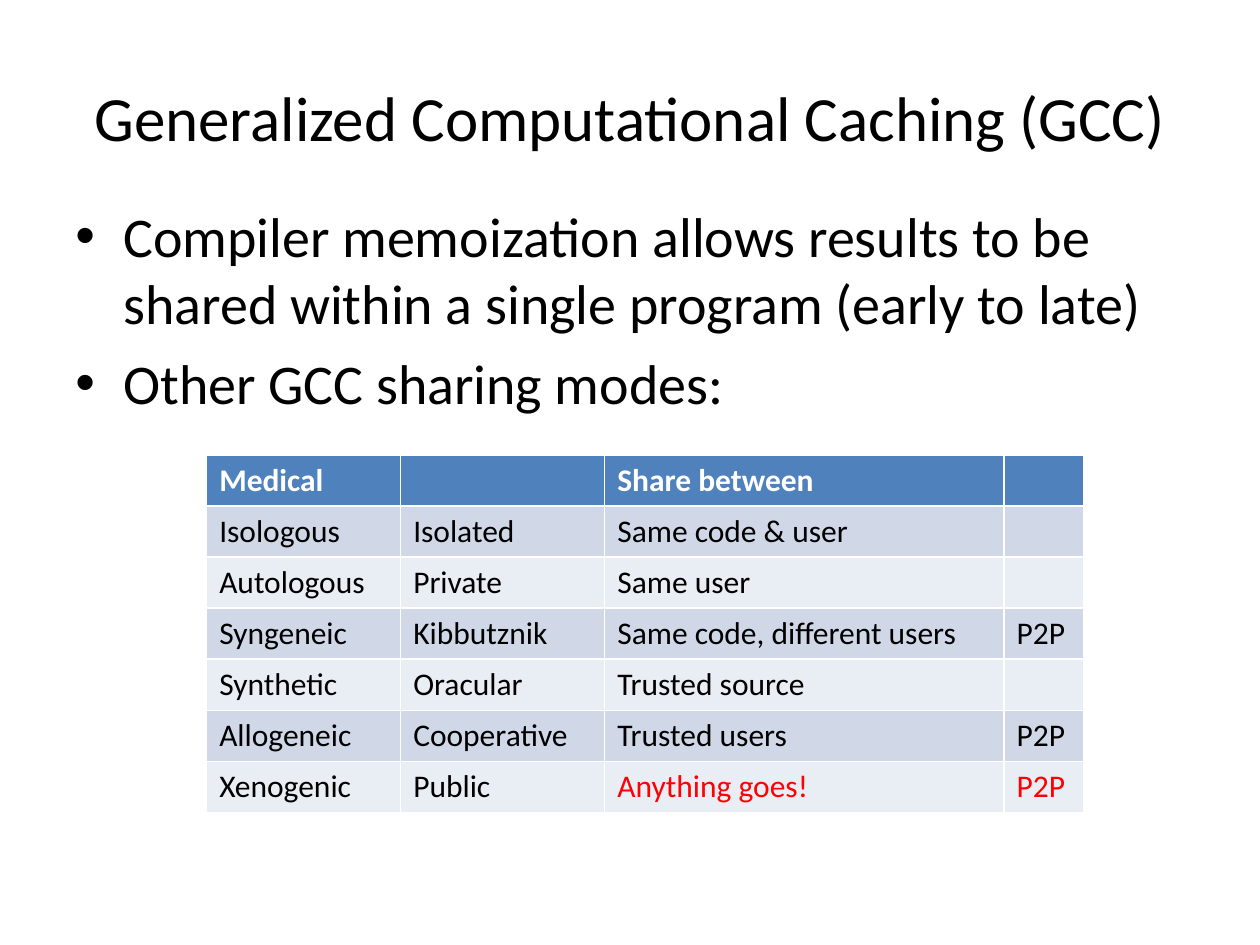
from dataclasses import dataclass

from lxml import etree
from pptx import Presentation
from pptx.dml.color import RGBColor
from pptx.enum.text import MSO_ANCHOR, PP_ALIGN
from pptx.oxml.ns import qn
from pptx.util import Inches, Pt

LEFT, CENTER = PP_ALIGN.LEFT, PP_ALIGN.CENTER
TOP, MIDDLE = MSO_ANCHOR.TOP, MSO_ANCHOR.MIDDLE
BLANK_LAYOUT = 6


@dataclass(frozen=True)
class Theme:
    font: str = "Calibri"
    title_size: int = 36
    body_size: int = 32
    table_size: int = 18
    bullet_gap: int = 7
    text: str = "000000"
    header_text: str = "FFFFFF"
    warning: str = "FF0003"
    header_fill: str = "4F81BD"
    bands: tuple[str, str] = ("D0D8E8", "E9EDF4")


@dataclass(frozen=True)
class TextBlock:
    left: float
    top: float
    width: float
    height: float
    lines: tuple[str, ...]
    size: int
    align: PP_ALIGN = LEFT
    anchor: MSO_ANCHOR = TOP
    bulleted: bool = False


@dataclass(frozen=True)
class SharingMode:
    medical: str
    nickname: str
    share_between: str
    network: str = ""
    risky: bool = False


THEME = Theme()

BLOCKS = (
    TextBlock(0.5, 0.3, 9, 1.25, ("Generalized Computational Caching (GCC)",),
              THEME.title_size, CENTER, MIDDLE),
    TextBlock(0.5, 1.55, 9, 5.15,
              ("Compiler memoization allows results to be shared within "
               "a single program (early to late)",
               "Other GCC sharing modes:"),
              THEME.body_size, bulleted=True),
)

HEADER = ("Medical", "", "Share between", "")
MODES = (
    SharingMode("Isologous", "Isolated", "Same code & user"),
    SharingMode("Autologous", "Private", "Same user"),
    SharingMode("Syngeneic", "Kibbutznik", "Same code, different users", "P2P"),
    SharingMode("Synthetic", "Oracular", "Trusted source"),
    SharingMode("Allogeneic", "Cooperative", "Trusted users", "P2P"),
    SharingMode("Xenogenic", "Public", "Anything goes!", "P2P", risky=True),
)
TABLE_LEFT, TABLE_TOP = 1.64, 3.61
COLUMN_WIDTHS = (1.54, 1.62, 3.17, 0.63)
TABLE_HEIGHT = 2.84


def format_runs(para, size: int, color: str, bold: bool = False) -> None:
    for run in para.runs:
        run.font.name = THEME.font
        run.font.size = Pt(size)
        run.font.bold = bold
        run.font.color.rgb = RGBColor.from_string(color)


def add_bullet(para) -> None:
    """Give the paragraph a round bullet with a hanging indent."""
    para.space_before = Pt(THEME.bullet_gap)
    properties = para._p.get_or_add_pPr()
    properties.set("marL", str(Inches(0.38)))
    properties.set("indent", str(Inches(-0.38)))
    etree.SubElement(properties, qn("a:buFont"), typeface="Arial")
    etree.SubElement(properties, qn("a:buChar"), char="•")


def add_text(slide, block: TextBlock) -> None:
    box = slide.shapes.add_textbox(Inches(block.left), Inches(block.top),
                                   Inches(block.width), Inches(block.height))
    frame = box.text_frame
    frame.word_wrap = True
    frame.vertical_anchor = block.anchor
    frame.text = "\n".join(block.lines)
    for para in frame.paragraphs:
        para.alignment = block.align
        format_runs(para, block.size, THEME.text)
        if block.bulleted:
            add_bullet(para)


def fill_cell(cell, text: str, fill: str, color: str, bold: bool = False) -> None:
    cell.fill.solid()
    cell.fill.fore_color.rgb = RGBColor.from_string(fill)
    cell.text_frame.text = text
    para = cell.text_frame.paragraphs[0]
    para.font.size = Pt(THEME.table_size)
    format_runs(para, THEME.table_size, color, bold)


def add_mode_table(slide) -> None:
    """Add the table of modes; its default style draws the white rules."""
    row_count = len(MODES) + 1
    table = slide.shapes.add_table(
        row_count, len(HEADER), Inches(TABLE_LEFT), Inches(TABLE_TOP),
        Inches(sum(COLUMN_WIDTHS)), Inches(TABLE_HEIGHT)).table
    for column, width in zip(table.columns, COLUMN_WIDTHS):
        column.width = Inches(width)
    for index, label in enumerate(HEADER):
        fill_cell(table.cell(0, index), label, THEME.header_fill,
                  THEME.header_text, bold=True)
    for row, mode in enumerate(MODES, start=1):
        band = THEME.bands[(row - 1) % 2]
        sharing_color = THEME.warning if mode.risky else THEME.text
        entries = ((mode.medical, THEME.text), (mode.nickname, THEME.text),
                   (mode.share_between, sharing_color),
                   (mode.network, sharing_color))
        for index, (text, color) in enumerate(entries):
            fill_cell(table.cell(row, index), text, band, color)


def main() -> None:
    deck = Presentation()
    deck.slide_width, deck.slide_height = Inches(10), Inches(7.5)
    slide = deck.slides.add_slide(deck.slide_layouts[BLANK_LAYOUT])
    for block in BLOCKS:
        add_text(slide, block)
    add_mode_table(slide)
    deck.save("out.pptx")


if __name__ == "__main__":
    main()
